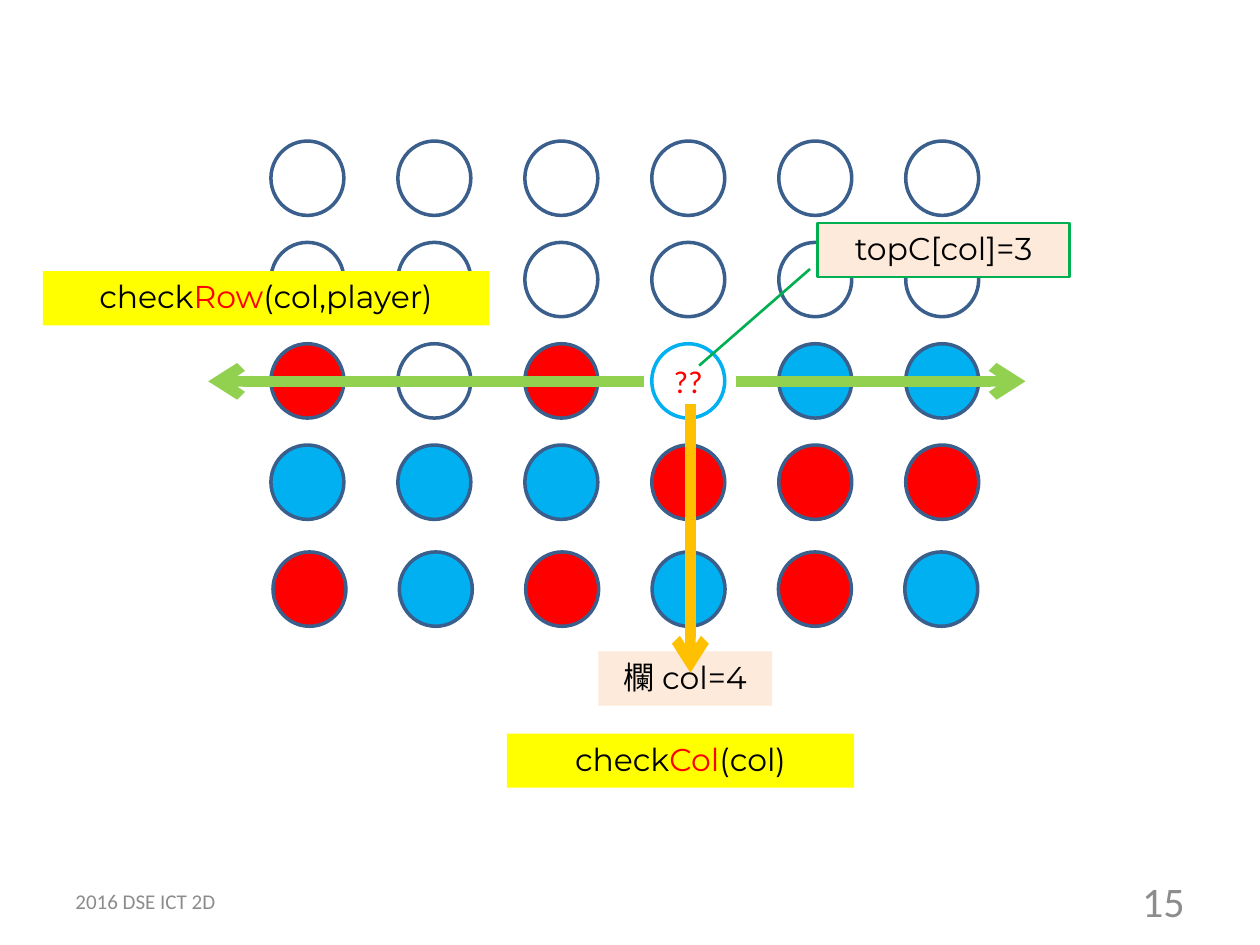
from lxml import etree
from pptx import Presentation
from pptx.dml.color import RGBColor
from pptx.enum.shapes import MSO_CONNECTOR, MSO_SHAPE
from pptx.enum.text import MSO_ANCHOR, PP_ALIGN
from pptx.oxml.ns import qn
from pptx.util import Pt

RECTANGLE, OVAL = MSO_SHAPE.RECTANGLE, MSO_SHAPE.OVAL
CALLOUT = MSO_SHAPE.LINE_CALLOUT_1
STRAIGHT = MSO_CONNECTOR.STRAIGHT
LEFT, CENTER, RIGHT = PP_ALIGN.LEFT, PP_ALIGN.CENTER, PP_ALIGN.RIGHT
TOP, MIDDLE = MSO_ANCHOR.TOP, MSO_ANCHOR.MIDDLE

BLACK = RGBColor(0x00, 0x00, 0x00)
GRAY = RGBColor(0x8C, 0x8C, 0x8C)
RED = RGBColor(0xFF, 0x00, 0x00)
BLUE = RGBColor(0x00, 0xB0, 0xF0)
OUTLINE = RGBColor(0x3A, 0x5F, 0x8C)
PEACH = RGBColor(0xFD, 0xEA, 0xDA)
YELLOW = RGBColor(0xFF, 0xFF, 0x00)
GREEN = RGBColor(0x00, 0xB0, 0x50)
LIME = RGBColor(0x92, 0xD0, 0x50)
ORANGE = RGBColor(0xFF, 0xC0, 0x00)

DISC_WIDTH, DISC_HEIGHT = 41.7, 42.5
COLUMN_GAP, ROW_GAP = 72.55, 57.9
BOARD = (154.8, 80.6)
BOTTOM_ROW = (156, 315.4)
BOTTOM_GAP = 72.2
COLUMNS = [
    (None, None, RED, BLUE),
    (None, None, None, BLUE),
    (None, None, RED, BLUE),
    (None, None, None, RED),
    (None, None, BLUE, RED),
    (None, None, BLUE, RED),
]
BOTTOM_COLOURS = (RED, BLUE, RED, BLUE, RED, BLUE)
CURRENT = (3, 2)


def write_text(frame, *parts, size=18, font="Montserrat", align=CENTER,
               anchor=TOP, margins=(7.2, 3.6)):
    frame.word_wrap = True
    frame.vertical_anchor = anchor
    frame.margin_left = frame.margin_right = Pt(margins[0])
    frame.margin_top = frame.margin_bottom = Pt(margins[1])
    paragraph = frame.paragraphs[0]
    paragraph.alignment = align
    for text, colour in parts:
        run = paragraph.add_run()
        run.text = text
        run.font.size = Pt(size)
        run.font.name = font
        run.font.color.rgb = colour


def add_figure(shapes, kind, box, fill=None, line=None, weight=2):
    figure = shapes.add_shape(kind, *map(Pt, box))
    figure.shadow.inherit = False
    if fill is None:
        figure.fill.background()
    else:
        figure.fill.solid()
        figure.fill.fore_color.rgb = fill
    if line is None:
        figure.line.fill.background()
    else:
        figure.line.color.rgb = line
        figure.line.width = Pt(weight)
    return figure


def add_label(shapes, box, fill, *parts):
    label = add_figure(shapes, RECTANGLE, box, fill)
    write_text(label.text_frame, *parts)


def add_discs(shapes, left, top, step_x, step_y, colours):
    group = shapes.add_group_shape()
    return [
        add_figure(group.shapes, OVAL,
                   (left + i * step_x, top + i * step_y, DISC_WIDTH, DISC_HEIGHT),
                   colour, OUTLINE)
        for i, colour in enumerate(colours)
    ]


def add_board(shapes, left, top):
    columns = [
        add_discs(shapes, left + i * COLUMN_GAP, top, 0, ROW_GAP, colours)
        for i, colours in enumerate(COLUMNS)
    ]
    column, row = CURRENT
    current = columns[column][row]
    current.line.color.rgb = BLUE
    write_text(current.text_frame, ("??", RED), font="Calibri",
               anchor=MIDDLE, margins=(0, 0))


def add_callout(shapes, box):
    callout = add_figure(shapes, CALLOUT, box, PEACH, GREEN, 1.5)
    for i, value in enumerate((0.85, -0.03, 2.63, -0.47)):
        callout.adjustments[i] = value
    write_text(callout.text_frame, ("topC[col]=3", BLACK))


def add_arrow(shapes, start, end, colour):
    arrow = shapes.add_connector(STRAIGHT, *map(Pt, start + end))
    arrow.line.color.rgb = colour
    arrow.line.width = Pt(6)
    line = arrow.line._get_or_add_ln()
    etree.SubElement(line, qn("a:tailEnd"), type="arrow")
    etree.SubElement(arrow._element.spPr, qn("a:effectLst"))


def add_footer(shapes, box, text, size, align):
    footer = shapes.add_textbox(*map(Pt, box))
    write_text(footer.text_frame, (text, GRAY), size=size, font="Calibri",
               align=align, anchor=MIDDLE)


def main():
    deck = Presentation()
    deck.slide_width, deck.slide_height = Pt(720), Pt(540)
    shapes = deck.slides.add_slide(deck.slide_layouts[6]).shapes

    add_footer(shapes, (36, 500.5, 168, 28.75), "2016 DSE ICT 2D", 12, LEFT)
    add_footer(shapes, (516, 500.5, 168, 28.75), "15", 24, RIGHT)
    add_label(shapes, (342, 372.3, 99.2, 31), PEACH, ("欄 col=4", BLACK))

    add_board(shapes, *BOARD)
    add_callout(shapes, (467.2, 127.4, 144, 31))
    add_discs(shapes, *BOTTOM_ROW, BOTTOM_GAP, 0, BOTTOM_COLOURS)

    add_label(shapes, (24.5, 155, 255, 31), YELLOW,
              ("check", BLACK), ("Row", RED), ("(col,player)", BLACK))
    add_label(shapes, (289.6, 419.2, 198.5, 31), YELLOW,
              ("check", BLACK), ("Col", RED), ("(col)", BLACK))

    add_arrow(shapes, (394.5, 231), (394.5, 384.4), ORANGE)
    add_arrow(shapes, (420.5, 217.9), (586, 217.9), LIME)
    add_arrow(shapes, (368, 217.9), (119, 217.9), LIME)

    deck.save("out.pptx")


if __name__ == "__main__":
    main()
